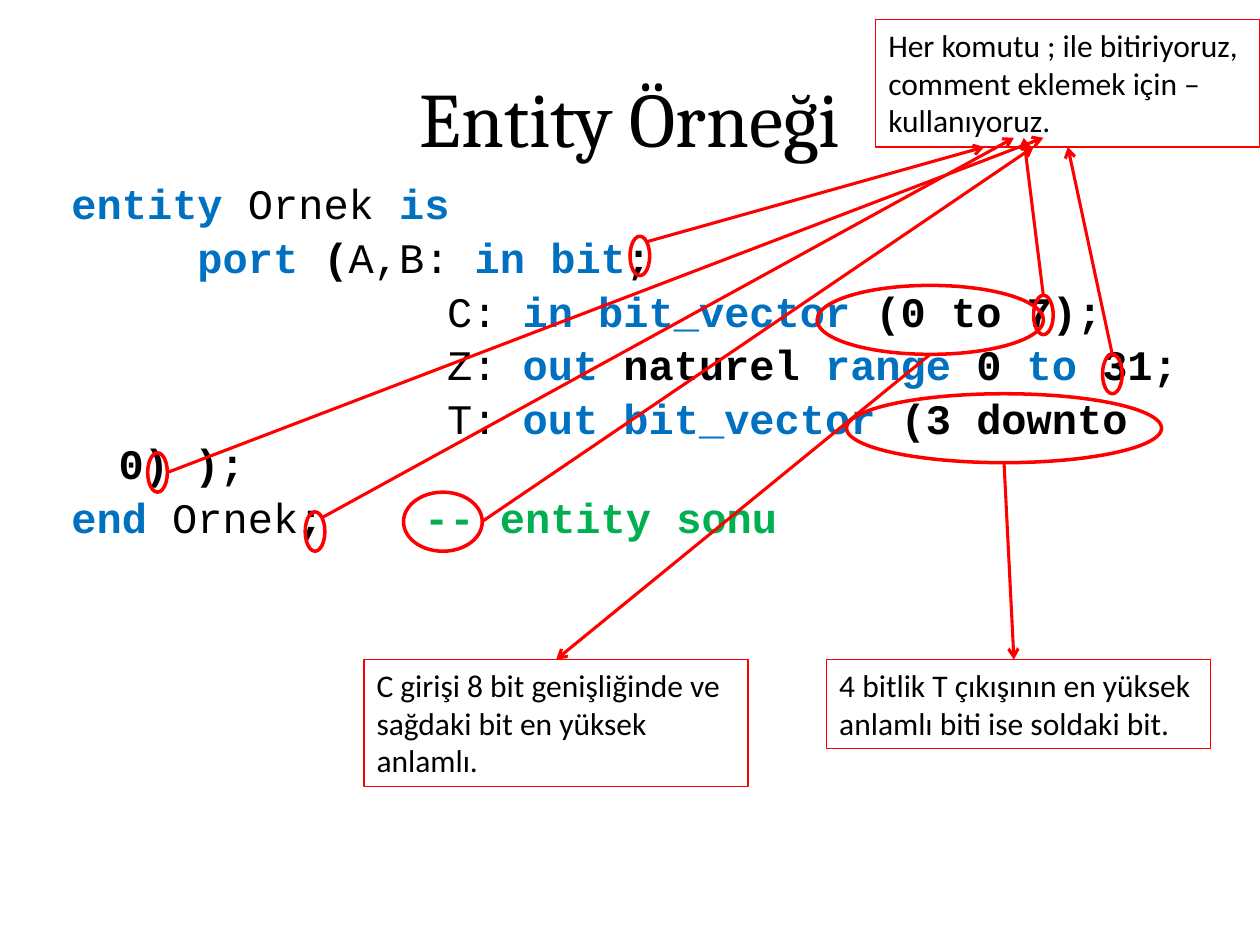
from lxml.etree import SubElement
from pptx import Presentation
from pptx.dml.color import RGBColor
from pptx.enum.shapes import MSO_CONNECTOR, MSO_SHAPE
from pptx.enum.text import MSO_ANCHOR, MSO_AUTO_SIZE, PP_ALIGN
from pptx.oxml.ns import qn
from pptx.util import Pt

COLORS = {"plain": "000000", "bold": "000000", "keyword": "0070C0",
          "comment": "00B050", "mark": "FF0000"}


def add_run(paragraph, text, font, size, style="plain", bold=False):
    run = paragraph.add_run()
    run.text = text
    run.font.name = font
    run.font.size = Pt(size)
    run.font.bold = bold
    run.font.color.rgb = RGBColor.from_string(COLORS[style])


def set_line(item, width):
    item.line.color.rgb = RGBColor.from_string(COLORS["mark"])
    item.line.width = Pt(width)


prs = Presentation()
prs.slide_width, prs.slide_height = Pt(720), Pt(540)
slide = prs.slides.add_slide(prs.slide_layouts[6])

# Title
title = slide.shapes.add_textbox(Pt(36), Pt(21.6), Pt(648), Pt(90)).text_frame
title.word_wrap = True
title.vertical_anchor = MSO_ANCHOR.MIDDLE
title.paragraphs[0].alignment = PP_ALIGN.CENTER
add_run(title.paragraphs[0], "Entity Örneği", "Cambria", 44)

# VHDL code: start of the first line, then styled runs
HANGING = 27
PORT_START, SIGNAL_START, COMMENT_START = 72, 214.6, 201.6
code_lines = [
    (0, [("entity ", "keyword"), ("Ornek ", "plain"), ("is", "keyword")]),
    (PORT_START, [("port", "keyword"), (" (", "bold"), ("A,B: ", "plain"),
                  ("in bit", "keyword"), (";", "bold")]),
    (SIGNAL_START, [("C: ", "plain"), ("in bit_vector", "keyword"),
                    (" (0 to 7);", "bold")]),
    (SIGNAL_START, [("Z: ", "plain"), ("out", "keyword"), (" naturel ", "bold"),
                    ("range", "keyword"), (" 0 ", "bold"), ("to", "keyword"),
                    (" 31;", "bold")]),
    (SIGNAL_START, [("T: ", "plain"), ("out bit_vector", "keyword"),
                    (" (3 downto 0) );", "bold")]),
    (0, [("end ", "keyword"), ("Ornek", "plain"), (";\t", "bold"),
         ("-- entity sonu", "comment")]),
]
code = slide.shapes.add_textbox(Pt(33.75), Pt(101.25), Pt(648), Pt(228)).text_frame
code.word_wrap = True
for number, (start, runs) in enumerate(code_lines):
    paragraph = code.add_paragraph() if number else code.paragraphs[0]
    paragraph.line_spacing = 0.9
    paragraph.space_before = Pt(4.8)
    properties = paragraph._p.get_or_add_pPr()
    if start:
        properties.set("marL", str(Pt(HANGING)))
        properties.set("indent", str(Pt(start - HANGING)))
    for text, style in runs:
        add_run(paragraph, text, "Courier New", 24, style, style != "plain")
# The comment stands at a tab stop on the last line
tab_stops = SubElement(properties, qn("a:tabLst"))
SubElement(tab_stops, qn("a:tab"), pos=str(Pt(COMMENT_START)), algn="l")

# Groups of marks: callouts, ovals, and arrows with the callout side they join
syntax_marks = {
    "callouts": [(500.5, 11.25, 72.7, "Her komutu ; ile bitiriyoruz, "
                  "comment eklemek için – kullanıyoruz.")],
    "ovals": [(x, y, 11.25, 22.5) for x, y in
              [(360, 135), (590.6, 168.75), (630, 202.5), (84.4, 258.75),
               (174.4, 292.5)]] + [(230.6, 281.25, 45, 33.75)],
    "arrows": [(369.4, 138.2, 562.5, 84, None), (596.2, 168.75, 585, 78.75, None),
               (635.6, 202.5, 610.3, 84, (0, 2)), (95.6, 270, 596.2, 78.75, None),
               (184, 295.8, 579.4, 78.75, None), (275.6, 298, 590.6, 84, None)],
}
vector_marks = {
    "callouts": [(472.5, 376.9, 50.9, "4 bitlik T çıkışının en yüksek anlamlı "
                  "biti ise soldaki bit."),
                 (208.1, 376.9, 72.7, "C girişi 8 bit genişliğinde ve sağdaki "
                  "bit en yüksek anlamlı.")],
    "ovals": [(483.75, 225, 180, 39.4), (466.9, 163.1, 129.4, 39.4)],
    "arrows": [(573.75, 264.4, 579.4, 376.9, None),
               (531.6, 202.5, 317.8, 376.9, (1, 0))],
}
CALLOUT_WIDTH = 219.4

for marks in (syntax_marks, vector_marks):
    group = slide.shapes.add_group_shape().shapes

    callouts = []
    for x, y, height, text in marks["callouts"]:
        callout = group.add_textbox(Pt(x), Pt(y), Pt(CALLOUT_WIDTH), Pt(height))
        callout.text_frame.word_wrap = True
        callout.text_frame.auto_size = MSO_AUTO_SIZE.SHAPE_TO_FIT_TEXT
        set_line(callout, 0.75)
        add_run(callout.text_frame.paragraphs[0], text, "Calibri", 18)
        callouts.append(callout)

    for x, y, width, height in marks["ovals"]:
        oval = group.add_shape(MSO_SHAPE.OVAL, Pt(x), Pt(y), Pt(width), Pt(height))
        oval.shadow.inherit = False
        oval.fill.background()
        set_line(oval, 2)

    for x1, y1, x2, y2, joint in marks["arrows"]:
        arrow = group.add_connector(MSO_CONNECTOR.STRAIGHT,
                                    Pt(x1), Pt(y1), Pt(x2), Pt(y2))
        set_line(arrow, 1.75)
        SubElement(arrow.line._get_or_add_ln(), qn("a:tailEnd"), type="arrow")
        SubElement(arrow._element.spPr, qn("a:effectLst"))
        if joint:
            callout_number, side = joint
            arrow.end_connect(callouts[callout_number], side)

prs.save("out.pptx")
